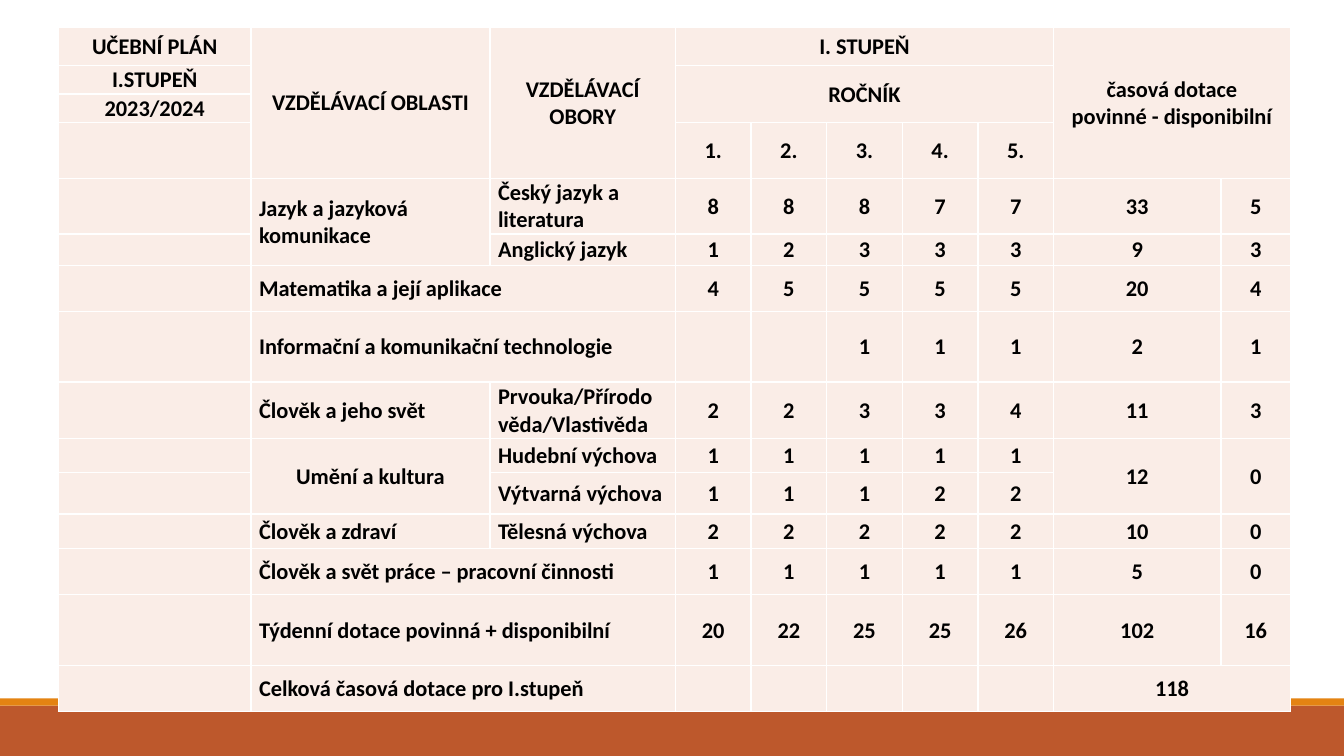
from lxml.etree import SubElement
from pptx import Presentation
from pptx.dml.color import RGBColor
from pptx.enum.shapes import MSO_SHAPE
from pptx.enum.text import MSO_ANCHOR, PP_ALIGN
from pptx.oxml.ns import qn
from pptx.util import Inches, Pt

THEME = {
    "cell": RGBColor.from_string("FAEDE7"),
    "band": RGBColor.from_string("BD582C"),
    "strip": RGBColor.from_string("E48312"),
    "rule": "FFFFFF",
    "font": {"name": "Calibri", "size": Pt(16), "bold": True},
    "text": RGBColor.from_string("000000"),
}
COLS = [1.91, 2.37, 1.84] + [0.75] * 5 + [1.66, 0.69]
ROWS = [0.38, 0.28, 0.28, 0.55, 0.55, 0.31, 0.46, 0.7,
        0.56, 0.34, 0.41, 0.34, 0.46, 0.7, 0.46]
HEAD = 4
CENTRED = {"Umění a kultura"}
# "<" joins a cell to the one on its left, "^" to the one above
PLAN = [row.split("|") for row in (
    "UČEBNÍ PLÁN|VZDĚLÁVACÍ OBLASTI|VZDĚLÁVACÍ OBORY|I. STUPEŇ|<|<|<|<"
    "|časová dotace\npovinné - disponibilní|<",
    "I.STUPEŇ|^|^|ROČNÍK|<|<|<|<|^|<",
    "2023/2024|^|^|^|<|<|<|<|^|<",
    "|^|^|1.|2.|3.|4.|5.|^|<",
    "|Jazyk a jazyková komunikace|Český jazyk a literatura|8|8|8|7|7|33|5",
    "|^|Anglický jazyk|1|2|3|3|3|9|3",
    "|Matematika a její aplikace|<|4|5|5|5|5|20|4",
    "|Informační a komunikační technologie|<|||1|1|1|2|1",
    "|Člověk a jeho svět|Prvouka/Přírodo\nvěda/Vlastivěda|2|2|3|3|4|11|3",
    "|Umění a kultura|Hudební výchova|1|1|1|1|1|12|0",
    "|^|Výtvarná výchova|1|1|1|2|2|^|^",
    "|Člověk a zdraví|Tělesná výchova|2|2|2|2|2|10|0",
    "|Člověk a svět práce – pracovní činnosti|<|1|1|1|1|1|5|0",
    "|Týdenní dotace povinná + disponibilní|<|20|22|25|25|26|102|16",
    "|Celková časová dotace pro I.stupeň|<||||||118|<",
)]


def apply(item, values):
    for name, value in values.items():
        setattr(item, name, value)


def add_bar(slide, box, color):
    bar = slide.shapes.add_shape(MSO_SHAPE.RECTANGLE, *map(Inches, box))
    bar.shadow.inherit = False
    bar.fill.solid()
    bar.fill.fore_color.rgb = color
    bar.line.fill.background()


def add_foot(slide, left, top, width, height):
    strip = 0.07
    add_bar(slide, (left, top + strip, width, height - strip), THEME["band"])
    add_bar(slide, (left, top, width, strip), THEME["strip"])


def add_rules(cell):
    """Draw the four borders of a cell."""
    props = cell._tc.get_or_add_tcPr()
    for side in ("lnL", "lnR", "lnT", "lnB"):
        line = SubElement(props, qn("a:" + side), w=str(Pt(1)))
        fill = SubElement(line, qn("a:solidFill"))
        SubElement(fill, qn("a:srgbClr"), val=THEME["rule"])


def style_cell(cell, text, left):
    add_rules(cell)
    cell.fill.solid()
    cell.fill.fore_color.rgb = THEME["cell"]
    edge = Inches(0.01) if text else 0
    apply(cell, {"vertical_anchor": MSO_ANCHOR.MIDDLE, "margin_top": edge,
                 "margin_left": Inches(0.08) if left else edge,
                 "margin_right": edge, "margin_bottom": 0})
    if not text:
        return
    cell.text = text
    for para in cell.text_frame.paragraphs:
        para.alignment = PP_ALIGN.LEFT if left else PP_ALIGN.CENTER
        for run in para.runs:
            apply(run.font, THEME["font"])
            run.font.color.rgb = THEME["text"]


def find_span(row, col):
    """Return the last row and column that a cell covers."""
    end, last = row, col
    while end + 1 < len(PLAN) and PLAN[end + 1][col] == "^":
        end += 1
    while last + 1 < len(COLS) and PLAN[row][last + 1] == "<":
        last += 1
    return end, last


def add_plan(slide, left, top):
    box = map(Inches, (left, top, sum(COLS), sum(ROWS)))
    table = slide.shapes.add_table(len(ROWS), len(COLS), *box).table
    apply(table, {"first_row": False, "horz_banding": False})
    for col, width in zip(table.columns, COLS):
        col.width = Inches(width)
    for row, height in zip(table.rows, ROWS):
        row.height = Inches(height)
    for r, line in enumerate(PLAN):
        for c, mark in enumerate(line):
            cell = table.cell(r, c)
            text = "" if mark in ("<", "^") else mark
            named = r >= HEAD and c in (1, 2) and text not in CENTRED
            style_cell(cell, text, named)
            if text and find_span(r, c) != (r, c):
                cell.merge(table.cell(*find_span(r, c)))


def main():
    deck = Presentation()
    wide, high = 13.33, 7.5
    apply(deck, {"slide_width": Inches(wide), "slide_height": Inches(high)})
    slide = deck.slides.add_slide(deck.slide_layouts[6])
    add_foot(slide, 0, 6.93, wide, high - 6.93)
    add_plan(slide, 0.58, 0.27)
    deck.save("out.pptx")


if __name__ == "__main__":
    main()
